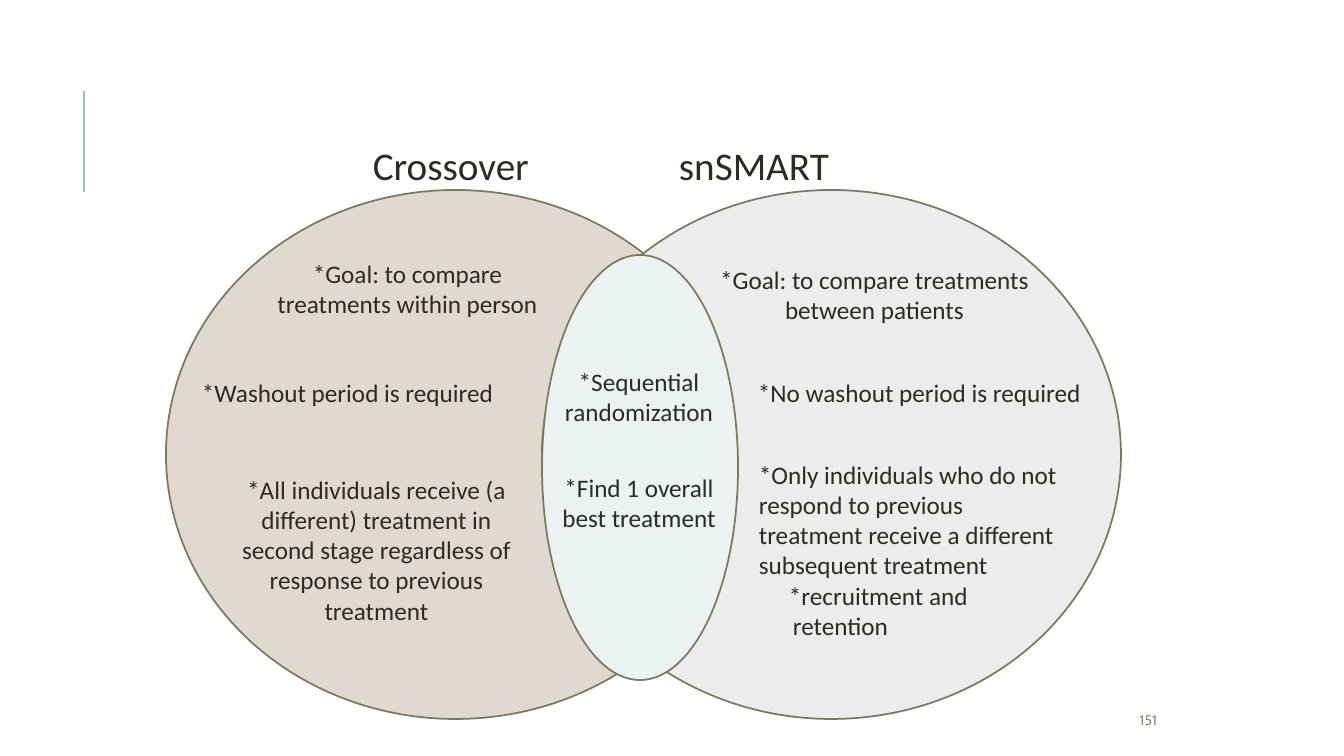
from lxml.etree import SubElement
from pptx import Presentation
from pptx.dml.color import RGBColor
from pptx.enum.shapes import MSO_CONNECTOR, MSO_SHAPE
from pptx.enum.text import MSO_ANCHOR as ANCHOR, PP_ALIGN as ALIGN
from pptx.oxml.ns import qn
from pptx.util import Emu, Pt

INK = RGBColor(0x2E, 0x2B, 0x21)
OLIVE = RGBColor(0x7D, 0x7A, 0x5C)
TEAL = RGBColor(0x9C, 0xBE, 0xBD)
NUMBER = RGBColor(0x92, 0x89, 0x69)
SAND = RGBColor(0xE0, 0xD9, 0xD0)
MIST = RGBColor(0xEA, 0xED, 0xEB)
ICE = RGBColor(0xEB, 0xF2, 0xF2)

ACCENT = (84, 192, 84, 91)
CIRCLES = [
    ((166, 190, 579, 529), SAND),
    ((542, 190, 579, 529), MIST),
    ((542, 255, 196, 425), ICE),
]
HEADINGS = [
    ("Crossover", (363, 136, 200, 57)),
    ("snSMART", (669, 136, 200, 57)),
]
CENTRED = [
    ("*Sequential randomization", (548, 361, 182, 72)),
    ("*Find 1 overall best treatment", (552, 467, 174, 72)),
    ("*Goal: to compare treatments within person", (249, 253, 317, 72)),
    ("*All individuals receive (a different) treatment in second stage "
     "regardless of response to previous treatment", (223, 469, 307, 163)),
    ("*Goal: to compare treatments between patients", (710, 259, 329, 102)),
]
LEFT = [
    ("*Washout period is required", (192, 372, 339, 40)),
    ("*No washout period is required", (748, 372, 365, 40)),
    ("*Only individuals who do not respond to previous treatment receive "
     "a different subsequent treatment\n*recruitment and\nretention",
     (749, 454, 329, 254)),
]
INDENTS = (0, 30, 34)
PAGE = ("151", (865, 700, 302, 40))


def px(n):
    return Emu(round(n * 914400 / 100.8))


def add_text(text, box, size=18, font="Calibri", color=INK,
             align=ALIGN.LEFT, anchor=ANCHOR.TOP):
    tf = slide.shapes.add_textbox(*map(px, box)).text_frame
    tf.word_wrap = True
    tf.vertical_anchor = anchor
    for i, line in enumerate(text.split("\n")):
        p = tf.add_paragraph() if i else tf.paragraphs[0]
        p.alignment = align
        if INDENTS[i]:
            p._p.get_or_add_pPr().set("marL", str(px(INDENTS[i])))
        r = p.add_run()
        r.text = line
        r.font.size = Pt(size)
        r.font.name = font
        r.font.color.rgb = color


prs = Presentation()
prs.slide_width, prs.slide_height = px(1344), px(756)
slide = prs.slides.add_slide(prs.slide_layouts[6])

rule = slide.shapes.add_connector(MSO_CONNECTOR.STRAIGHT, *map(px, ACCENT))
rule.line.color.rgb = TEAL
rule.line.width = Pt(1.5)
SubElement(rule._element.spPr, qn("a:effectLst"))

add_text(*PAGE, size=10, font="Cabin", color=NUMBER,
         align=ALIGN.RIGHT, anchor=ANCHOR.MIDDLE)

for box, fill in CIRCLES:
    sp = slide.shapes.add_shape(MSO_SHAPE.OVAL, *map(px, box))
    sp.shadow.inherit = False
    sp.fill.solid()
    sp.fill.fore_color.rgb = fill
    sp.line.color.rgb = OLIVE
    sp.line.width = Pt(1.25)

for text, box in HEADINGS:
    add_text(text, box, size=28)
for text, box in CENTRED:
    add_text(text, box, align=ALIGN.CENTER)
for text, box in LEFT:
    add_text(text, box)

prs.save("out.pptx")
